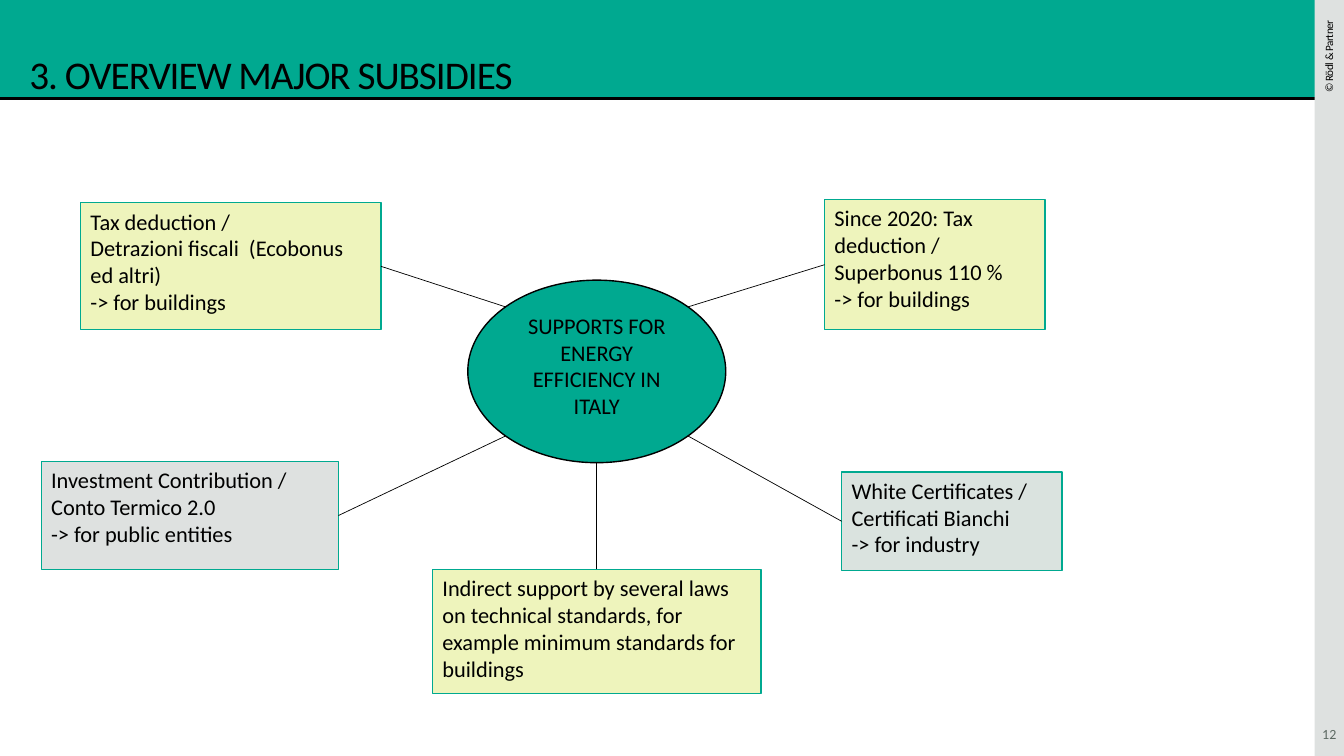
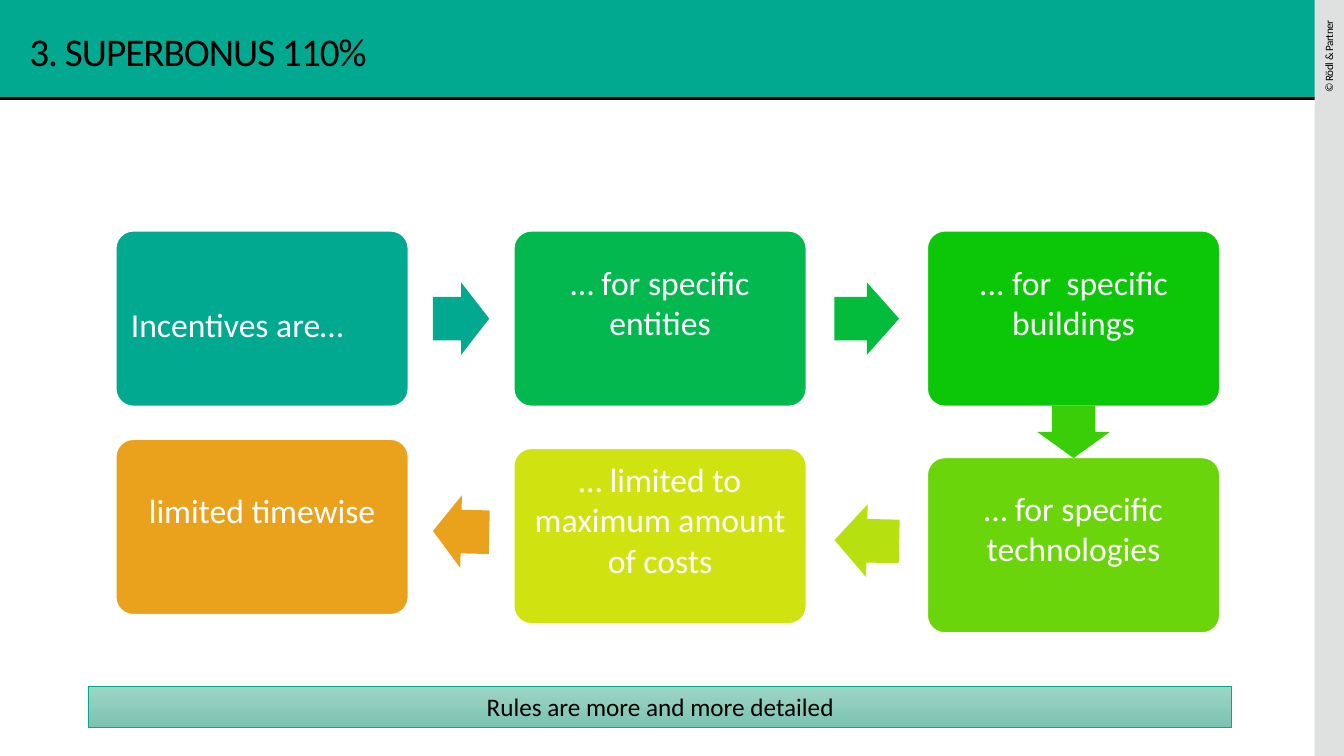
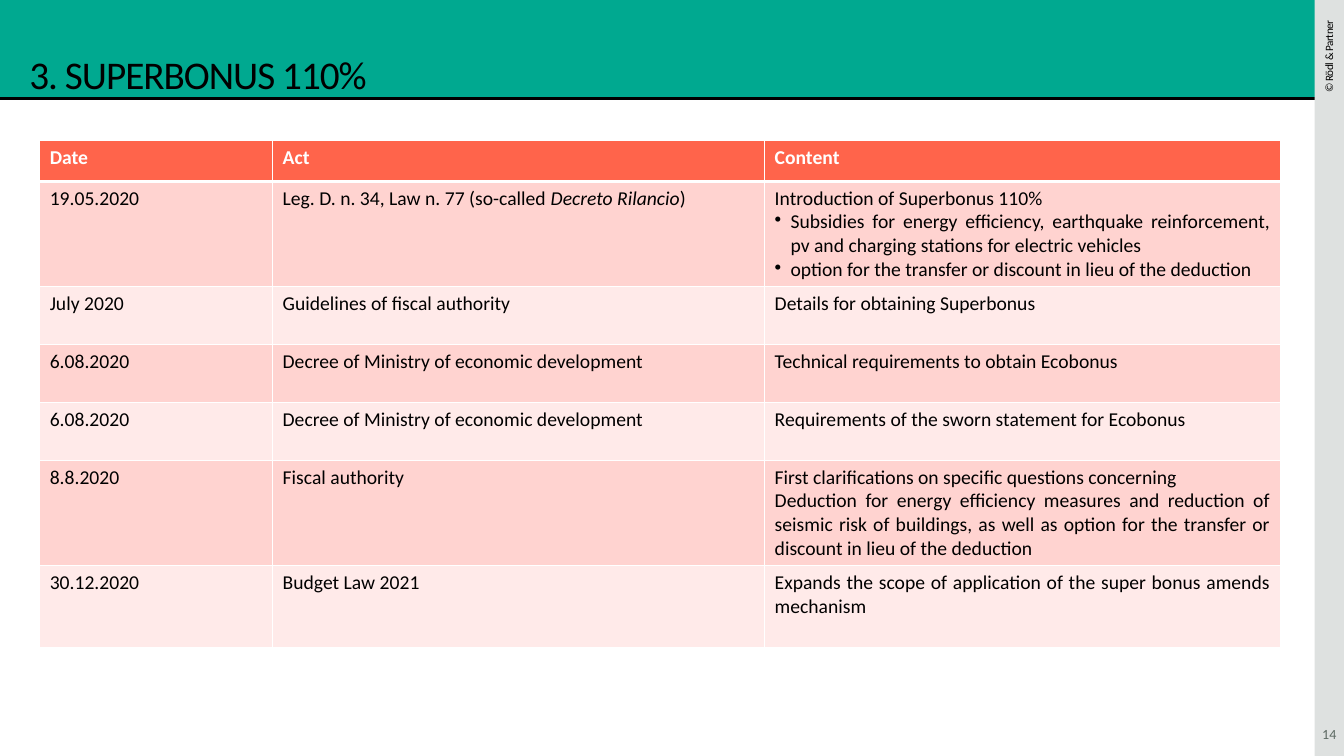
"""Build three slides on Italian energy efficiency subsidies."""
import math

import pptx
import pptx.dml.color
import pptx.enum.shapes
import pptx.enum.text
import pptx.oxml
import pptx.oxml.ns
import pptx.util

Cm = pptx.util.Cm
Pt = pptx.util.Pt
SHAPES = pptx.enum.shapes.MSO_SHAPE
ALIGN = pptx.enum.text.PP_ALIGN
ANCHOR = pptx.enum.text.MSO_ANCHOR

FONT = "Calibri"
GREEN, GREY, LIME = "00A990", "DEE1E0", "EEF4BC"
BLACK, WHITE, NUMBER_GREY = "000000", "FFFFFF", "5C6962"
SLIDE_WIDTH, SLIDE_HEIGHT = 33.87, 19.05
BAND_HEIGHT, STRIP_WIDTH = 2.49, 0.74
STRIP_LEFT = SLIDE_WIDTH - STRIP_WIDTH
COPYRIGHT = "© Rödl & Partner"
TITLE_LOW, TITLE_MIDDLE = 1.32, 0.74

HUB = ("SUPPORTS FOR ENERGY EFFICIENCY IN ITALY", (11.79, 7.06, 6.5, 4.6))
TOP, LEFT, RIGHT = 0, 1, 3
SUPPORTS = [
    (["Tax deduction /", "Detrazioni fiscali  (Ecobonus ed altri)", "-> for buildings"],
     (2.03, 5.11, 7.57, 3.2), LIME, RIGHT, 225),
    (["Since 2020: Tax deduction / Superbonus 110 %", "-> for buildings"],
     (20.78, 5.03, 5.56, 3.28), LIME, LEFT, 315),
    (["Investment Contribution / Conto Termico 2.0", "-> for public entities"],
     (1.04, 11.63, 7.49, 2.72), GREY, RIGHT, 135),
    (["White Certificates / Certificati Bianchi", "-> for industry"],
     (21.21, 11.89, 5.56, 2.49), "DAE3DF", LEFT, 45),
    (["Indirect support by several laws on technical standards, "
      "for example minimum standards for buildings"],
     (10.9, 14.35, 8.28, 3.12), LIME, TOP, 90),
]

CARD_WIDTH, CARD_HEIGHT = 7.37, 4.42
CARDS = [
    ("Incentives are…", 2.92, 5.82, GREEN),
    ("… for specific entities", 12.95, 5.82, "03B84E"),
    ("... for  specific buildings", 23.37, 5.82, "0CC707"),
    ("… for specific technologies", 23.37, 11.53, "6AD50B"),
    ("… limited to maximum amount of costs", 12.95, 11.3, "D0E310"),
    ("limited timewise", 2.92, 11.07, "EAA21C"),
]
ARROW_HEIGHT = 1.83
ARROWS = [(1.42, GREEN), (1.63, "04BC3C"), (1.32, "3ACE09"), (1.63, "B6E00F"), (1.42, "EAA21C")]
CONCLUSION = "Rules are more and more detailed"

COLUMN_WIDTHS = [5.87, 12.4, 13]
ROW_HEIGHTS = [1.03, 2.65, 1.46, 1.46, 1.46, 2.65, 2.07]
HEADER_FILL, ROW_FILLS = "FF644B", ["FFEAE9", "FFD3D0"]
ACTS = [
    ("Date", "Act", ["Content"]),
    ("19.05.2020", "Leg. D. n. 34, Law n. 77 (so-called _Decreto Rilancio_)",
     ["Introduction of Superbonus 110%",
      "• Subsidies for energy efficiency, earthquake reinforcement, pv and charging stations "
      "for electric vehicles",
      "• option for the transfer or discount in lieu of the deduction"]),
    ("July 2020", "Guidelines of fiscal authority", ["Details for obtaining Superbonus"]),
    ("6.08.2020", "Decree of Ministry of economic development",
     ["Technical requirements to obtain Ecobonus"]),
    ("6.08.2020", "Decree of Ministry of economic development",
     ["Requirements of the sworn statement for Ecobonus"]),
    ("8.8.2020", "Fiscal authority",
     ["First clarifications on specific questions concerning",
      "Deduction for energy efficiency measures and reduction of seismic risk of buildings, "
      "as well as option for the transfer or discount in lieu of the deduction"]),
    ("30.12.2020", "Budget Law 2021",
     ["Expands the scope of application of the super bonus amends mechanism"]),
]


def rgb(colour):
    """Turn a hex string into a colour."""
    return pptx.dml.color.RGBColor.from_string(colour)


def append_xml(parent, xml):
    """Append a DrawingML fragment to an element."""
    fragment = xml.replace(" ", " " + pptx.oxml.ns.nsdecls("a") + " ", 1)
    parent.append(pptx.oxml.parse_xml(fragment))


def make_bullet(paragraph, character):
    """Give a paragraph a hanging bullet."""
    properties = paragraph._p.get_or_add_pPr()
    properties.set("marL", str(Cm(0.4)))
    properties.set("indent", str(Cm(-0.4)))
    append_xml(properties, f'<a:buChar char="{character}"/>')


def write(text_frame, lines, size, colour=BLACK, align=ALIGN.LEFT, bold=False, spacing=0):
    """Write paragraphs; underscores enclose italics and a leading dot makes a bullet."""
    text_frame.word_wrap = True
    for index, line in enumerate(lines):
        paragraph = text_frame.add_paragraph() if index else text_frame.paragraphs[0]
        paragraph.alignment = align
        if line.startswith("• "):
            make_bullet(paragraph, "•")
            line = line[2:]
        for part_index, part in enumerate(line.split("_")):
            run = paragraph.add_run()
            run.text = part
            run.font.name, run.font.size = FONT, Pt(size)
            run.font.bold, run.font.italic = bold, part_index % 2 == 1
            run.font.color.rgb = rgb(colour)
            if spacing:
                run._r.get_or_add_rPr().set("spc", str(spacing))


def set_margins(text_frame, left=0, top=0, right=0, bottom=0):
    """Set the four insets of a text frame."""
    text_frame.margin_left, text_frame.margin_top = Cm(left), Cm(top)
    text_frame.margin_right, text_frame.margin_bottom = Cm(right), Cm(bottom)


def add_box(slide, kind, place, fill, line=None, line_width=1.0):
    """Add a filled preset shape, outlined when a line colour is given."""
    shape = slide.shapes.add_shape(kind, *map(Cm, place))
    shape.shadow.inherit = False
    shape.fill.solid()
    shape.fill.fore_color.rgb = rgb(fill)
    if line:
        shape.line.color.rgb = rgb(line)
        shape.line.width = Pt(line_width)
    else:
        shape.line.fill.background()
    shape.text_frame.vertical_anchor = ANCHOR.TOP
    return shape


def add_label(slide, place, text, size, colour, spacing=0):
    """Add a centred text box without insets."""
    label = slide.shapes.add_textbox(*map(Cm, place))
    set_margins(label.text_frame)
    label.text_frame.vertical_anchor = ANCHOR.MIDDLE
    write(label.text_frame, [text], size, colour, ALIGN.CENTER, spacing=spacing)
    return label


def add_line(slide, start, end, width):
    """Add a straight black line between two points."""
    straight = pptx.enum.shapes.MSO_CONNECTOR.STRAIGHT
    line = slide.shapes.add_connector(straight, *map(Cm, (*start, *end)))
    line.line.color.rgb = rgb(BLACK)
    line.line.width = Pt(width)
    append_xml(line.element.spPr, "<a:effectLst />")
    return line


def add_slide(presentation, title_text, title_top, number=None):
    """Add a title-only slide with its heading and page number."""
    slide = presentation.slides.add_slide(presentation.slide_layouts[5])
    title = slide.shapes.title
    title.left, title.top, title.width, title.height = map(Cm, (0.74, title_top, 31.8, 1.09))
    set_margins(title.text_frame)
    title.text_frame.auto_size = pptx.enum.text.MSO_AUTO_SIZE.NONE
    title.text_frame.vertical_anchor = ANCHOR.MIDDLE
    write(title.text_frame, [title_text], 28, spacing=-70)
    if number:
        add_label(slide, (STRIP_LEFT, 17.93, STRIP_WIDTH, 1.12), number, 10, NUMBER_GREY)
    return slide


def move_frame_to_layout(slide):
    """Draw the band, rule, side strip and copyright line once, in the layout."""
    layout = slide.slide_layout
    for placeholder in list(layout.placeholders):
        if placeholder.placeholder_format.type != pptx.enum.shapes.PP_PLACEHOLDER.TITLE:
            layout.shapes.element.remove(placeholder.element)
    band = add_box(slide, SHAPES.RECTANGLE, (0, 0, SLIDE_WIDTH, BAND_HEIGHT), GREEN)
    rule = add_line(slide, (0, BAND_HEIGHT), (SLIDE_WIDTH, BAND_HEIGHT), 2.25)
    strip = add_box(slide, SHAPES.RECTANGLE, (STRIP_LEFT, 0, STRIP_WIDTH, SLIDE_HEIGHT), GREY)
    copyright_line = add_label(slide, (32.23, 1.05, 2.51, 0.74), COPYRIGHT, 8, BLACK, -30)
    copyright_line.rotation = 270
    for position, part in enumerate((band, rule, strip, copyright_line), start=2):
        layout.shapes.element.insert(position, part.element)


def fill_overview(slide):
    """Draw the hub and the support schemes tied to it."""
    hub_text, hub_place = HUB
    left, top, width, height = hub_place
    for lines, place, fill, side, angle in SUPPORTS:
        box = add_box(slide, SHAPES.RECTANGLE, place, fill, GREEN)
        write(box.text_frame, lines, 16)
        radians = math.radians(angle)
        hub_point = (left + width / 2 * (1 + math.cos(radians)),
                     top + height / 2 * (1 + math.sin(radians)))
        add_line(slide, place[:2], hub_point, 0.5).begin_connect(box, side)
    hub = add_box(slide, SHAPES.OVAL, hub_place, GREEN, BLACK)
    write(hub.text_frame, [hub_text], 16, align=ALIGN.CENTER)


def fill_process(slide):
    """Draw the chain of cards, the arrows between them and the conclusion."""
    for index, (text, left, top, fill) in enumerate(CARDS):
        place = (left, top, CARD_WIDTH, CARD_HEIGHT)
        card = add_box(slide, SHAPES.ROUNDED_RECTANGLE, place, fill, WHITE)
        card.adjustments[0] = 0.1
        card.text_frame.vertical_anchor = ANCHOR.MIDDLE
        top_margin, bottom_margin = (0, 0.85) if index else (0.25, 0)
        set_margins(card.text_frame, 0.25, top_margin, 0.25, bottom_margin)
        write(card.text_frame, [text], 24, WHITE, ALIGN.CENTER if index else ALIGN.LEFT)
    for (length, fill), card, following in zip(ARROWS, CARDS, CARDS[1:]):
        across, down = following[1] - card[1], following[2] - card[2]
        left = card[1] + (across + CARD_WIDTH - length) / 2
        top = card[2] + (down + CARD_HEIGHT - ARROW_HEIGHT) / 2
        arrow = add_box(slide, SHAPES.RIGHT_ARROW, (left, top, length, ARROW_HEIGHT), fill)
        arrow.adjustments[0], arrow.adjustments[1] = 0.6, 0.5
        arrow.rotation = math.degrees(math.atan2(down, across)) % 360
    bar = add_box(slide, SHAPES.RECTANGLE, (2.24, 17.3, 28.8, 1.02), GREEN, GREEN, 0.5)
    bar.fill.gradient()
    bar.fill.gradient_angle = 270
    for stop, colour, position in zip(bar.fill.gradient_stops, ("9DD4C5", "7CC3B1"), (0, 1)):
        stop.color.rgb, stop.position = rgb(colour), position
    bar.text_frame.vertical_anchor = ANCHOR.MIDDLE
    write(bar.text_frame, [CONCLUSION], 18, align=ALIGN.CENTER)


def format_cell(cell, fill, bottom_width, top_width):
    """Give a cell white borders and a plain fill."""
    properties = cell._tc.get_or_add_tcPr()
    for edge, width in (("L", 1), ("R", 1), ("T", top_width), ("B", bottom_width)):
        append_xml(properties, f'<a:ln{edge} w="{Pt(width)}"><a:solidFill>'
                               f'<a:srgbClr val="{WHITE}"/></a:solidFill></a:ln{edge}>')
    cell.fill.solid()
    cell.fill.fore_color.rgb = rgb(fill)


def fill_acts(slide):
    """Draw the table of legal acts."""
    place = (1, 3.54, sum(COLUMN_WIDTHS), sum(ROW_HEIGHTS))
    table = slide.shapes.add_table(len(ACTS), len(COLUMN_WIDTHS), *map(Cm, place)).table
    table.horz_banding = False
    for column, width in zip(table.columns, COLUMN_WIDTHS):
        column.width = Cm(width)
    for index, (date, act, content) in enumerate(ACTS):
        header = index == 0
        table.rows[index].height = Cm(ROW_HEIGHTS[index])
        fill = HEADER_FILL if header else ROW_FILLS[index % 2]
        for column, lines in enumerate(([date], [act], content)):
            cell = table.cell(index, column)
            format_cell(cell, fill, 3 if header else 1, 3 if index == 1 else 1)
            align = ALIGN.JUSTIFY if column == 2 and not header else ALIGN.LEFT
            write(cell.text_frame, lines, 14, WHITE if header else BLACK, align, header)


def main():
    """Build and save the presentation."""
    presentation = pptx.Presentation()
    presentation.slide_width, presentation.slide_height = Cm(SLIDE_WIDTH), Cm(SLIDE_HEIGHT)
    overview = add_slide(presentation, "3. OVERVIEW MAJOR SUBSIDIES", TITLE_LOW, "12")
    move_frame_to_layout(overview)
    fill_overview(overview)
    fill_process(add_slide(presentation, "3. SUPERBONUS 110%", TITLE_MIDDLE))
    fill_acts(add_slide(presentation, "3. SUPERBONUS 110%", TITLE_LOW, "14"))
    presentation.save("out.pptx")


if __name__ == "__main__":
    main()
